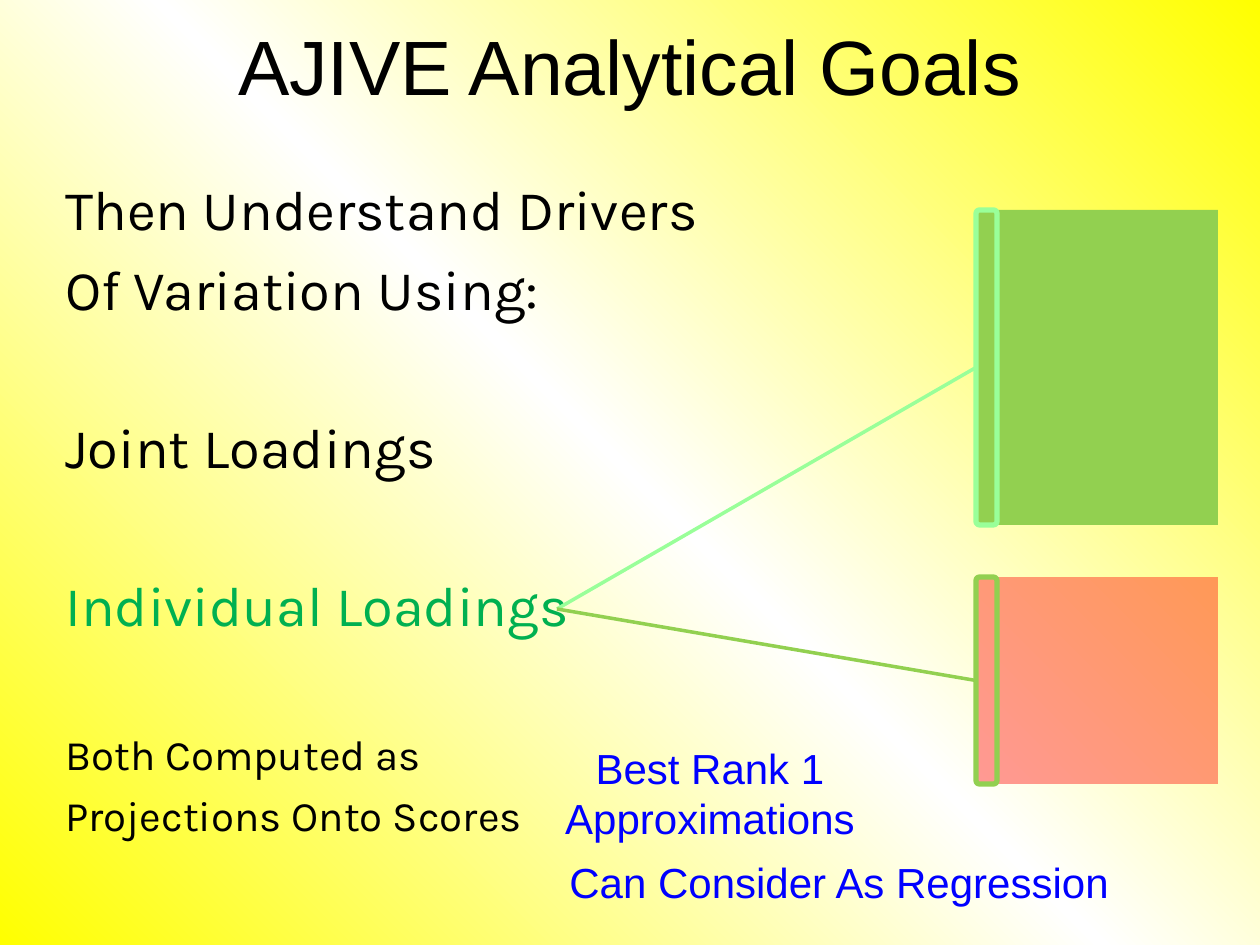
import copy
from dataclasses import dataclass

import pptx
import pptx.dml.color
import pptx.enum.shapes
import pptx.enum.text
import pptx.oxml
import pptx.oxml.ns
import pptx.util

SCALE = 914400 / 126  # EMU per px
SHAPES = pptx.enum.shapes.MSO_SHAPE
ALIGN = pptx.enum.text.PP_ALIGN
ANCHOR = pptx.enum.text.MSO_ANCHOR


@dataclass(frozen=True)
class Theme:
    heading_font: str = "Arial"
    body_font: str = "Karla"
    black: str = "000000"
    blue: str = "0000FF"
    emphasis: str = "00B050"
    yellow: str = "FFFF00"
    white: str = "FFFFFF"
    green: str = "92D050"
    mint: str = "99FF99"
    red: str = "FF0000"
    title_size: int = 44
    large: int = 32
    small: int = 24
    connector_width: int = 2
    outline_width: int = 3


def px(length):
    return pptx.util.Emu(round(length * SCALE))


def rgb(color):
    return pptx.dml.color.RGBColor.from_string(color)


class SlideBuilder:
    def __init__(self, page, theme):
        self.page = page
        self.theme = theme

    def background(self, edge, middle):
        """Diagonal gradient from edge through middle and back to edge."""
        fill = self.page.background.fill
        fill.gradient()
        fill.gradient_angle = 225
        first = fill.gradient_stops[0]._gs
        first.addnext(copy.deepcopy(first))
        for stop, position, color in zip(
            fill.gradient_stops, (0, 0.5, 1), (edge, middle, edge)
        ):
            stop.position = position
            stop.color.rgb = rgb(color)

    def text(self, bounds, lines, font, align=ALIGN.LEFT, anchor=ANCHOR.TOP, wrap=True):
        """Lines are (text, size, color, space before in points)."""
        box = self.page.shapes.add_textbox(*map(px, bounds))
        frame = box.text_frame
        frame.word_wrap = wrap
        frame.vertical_anchor = anchor
        frame.text = "\n".join(line[0] for line in lines)
        for para, (_, size, color, space) in zip(frame.paragraphs, lines):
            para.alignment = align
            para.space_before = pptx.util.Pt(space)
            for span in para.runs:
                span.font.name = font
                span.font.size = pptx.util.Pt(size)
                span.font.color.rgb = rgb(color)

    def block(self, bounds, color, opacity=100):
        shape = self.page.shapes.add_shape(SHAPES.RECTANGLE, *map(px, bounds))
        shape.shadow.inherit = False
        shape.line.fill.background()
        shape.fill.solid()
        shape.fill.fore_color.rgb = rgb(color)
        if opacity < 100:
            tint = shape._element.spPr.find(".//" + pptx.oxml.ns.qn("a:srgbClr"))
            alpha = pptx.oxml.parse_xml(
                f'<a:alpha {pptx.oxml.ns.nsdecls("a")} val="{opacity * 1000}"/>'
            )
            tint.append(alpha)
        return shape

    def outline(self, bounds, color):
        shape = self.page.shapes.add_shape(SHAPES.ROUNDED_RECTANGLE, *map(px, bounds))
        shape.shadow.inherit = False
        shape.fill.background()
        shape.line.color.rgb = rgb(color)
        shape.line.width = pptx.util.Pt(self.theme.outline_width)

    def connector(self, block, end, color):
        """Line from the middle of the block's left side to a point."""
        line = self.page.shapes.add_connector(
            pptx.enum.shapes.MSO_CONNECTOR.STRAIGHT, 0, 0, *map(px, end)
        )
        line.begin_connect(block, 1)
        line.line.color.rgb = rgb(color)
        line.line.width = pptx.util.Pt(self.theme.connector_width)
        line._element.spPr.append(
            pptx.oxml.parse_xml(f'<a:effectLst {pptx.oxml.ns.nsdecls("a")}/>')
        )


def main():
    theme = Theme()
    deck = pptx.Presentation()
    deck.slide_width, deck.slide_height = px(1260), px(945)
    builder = SlideBuilder(deck.slides.add_slide(deck.slide_layouts[6]), theme)
    builder.background(theme.yellow, theme.white)

    builder.text(
        (63, 0, 1134, 130),
        [("AJIVE Analytical Goals", theme.title_size, theme.black, 0)],
        theme.heading_font, ALIGN.CENTER, ANCHOR.MIDDLE,
    )
    section_gap = 52
    builder.text(
        (53, 168, 1176, 724),
        [
            ("Then Understand Drivers", theme.large, theme.black, 0),
            ("Of Variation Using:", theme.large, theme.black, 7.3),
            ("Joint Loadings", theme.large, theme.black, section_gap),
            ("Individual Loadings", theme.large, theme.emphasis, section_gap),
            ("Both Computed as", theme.small, theme.black, section_gap),
            ("Projections Onto Scores", theme.small, theme.black, 5.6),
        ],
        theme.body_font,
    )

    left, block_width, bar_width = 976, 242, 21
    loadings_end = (557, 609)
    # top, height, fill, opacity, accent
    matrices = [
        (210, 315, theme.green, 100, theme.mint),
        (577, 207, theme.red, 40, theme.green),
    ]
    blocks = [
        builder.block((left, top, block_width, height), fill, opacity)
        for top, height, fill, opacity, _ in matrices
    ]
    for block, (*_, accent) in zip(blocks, matrices):
        builder.connector(block, loadings_end, accent)
    for top, height, _, _, accent in matrices:
        builder.outline((left, top, bar_width, height), accent)

    builder.text(
        (551, 736, 318, 115),
        [(line, theme.small, theme.blue, 0) for line in ("Best Rank 1", "Approximations")],
        theme.heading_font, ALIGN.CENTER, wrap=False,
    )
    builder.text(
        (557, 850, 571, 63),
        [("Can Consider As Regression", theme.small, theme.blue, 0)],
        theme.heading_font, wrap=False,
    )
    deck.save("out.pptx")


if __name__ == "__main__":
    main()
